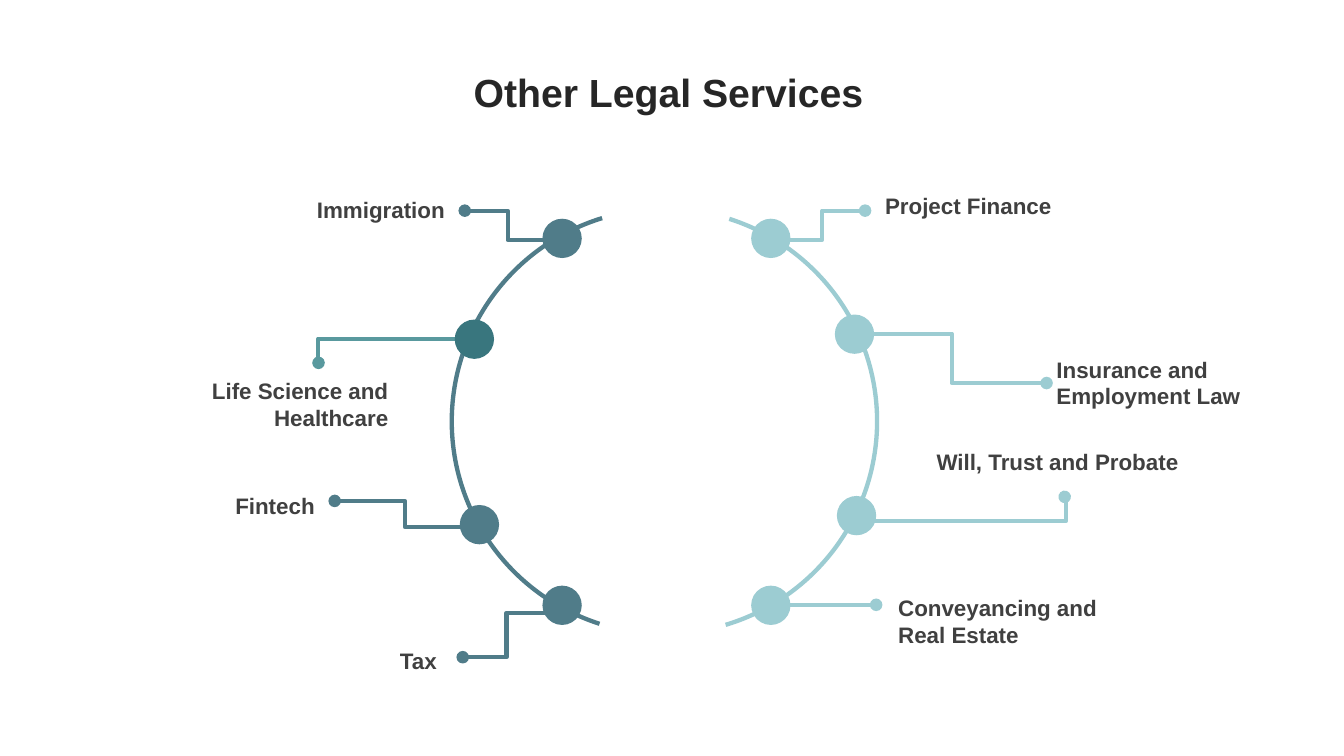
"""Build the slide of other legal services around two arcs."""
from collections import namedtuple

from lxml import etree
from pptx import Presentation
from pptx.dml.color import RGBColor
from pptx.enum.shapes import MSO_CONNECTOR as CONNECTOR, MSO_SHAPE as SHAPE
from pptx.enum.text import MSO_ANCHOR as ANCHOR, MSO_AUTO_SIZE as AUTO_SIZE, PP_ALIGN as ALIGN
from pptx.oxml.ns import qn
from pptx.util import Emu, Pt

EMU_PER_PX = 9144
NODE_SIZE = 39
COLORS = {
    "title": "262626", "label": "404040", "slate": "507C89",
    "sky": "9CCCD2", "teal": "39767E", "teal_line": "59999E",
}
TITLE_FONT = {"name": "Arial", "size": Pt(28), "bold": True}
LABEL_FONT = {"name": "Arial", "size": Pt(16), "bold": True}

Service = namedtuple("Service", "text box align node start end bend node_color link_color")
SERVICES = [
    Service("Immigration", (167, 190, 284, 37), ALIGN.RIGHT,
            (538, 217), (546, 238), (461, 209), 0.5, "slate", "slate"),
    Service("Life Science and Healthcare", (128, 369, 267, 64), ALIGN.RIGHT,
            (451, 317), (479, 336), (316, 360), 1.001, "teal", "teal_line"),
    Service("Fintech", (51, 483, 271, 37), ALIGN.RIGHT,
            (456, 501), (471, 523), (332, 497), 0.5, "slate", "slate"),
    Service("Tax", (159, 637, 284, 37), ALIGN.RIGHT,
            (538, 581), (546, 608), (459, 652), 0.5, "slate", "slate"),
    Service("Project Finance", (868, 186, 275, 37), ALIGN.LEFT,
            (745, 217), (773, 238), (858, 209), 0.5, "sky", "sky"),
    Service("Insurance and Employment Law", (1038, 348, 275, 64), ALIGN.LEFT,
            (828, 312), (850, 331), (1038, 380), 0.5, "sky", "sky"),
    Service("Will, Trust and Probate", (919, 440, 275, 37), ALIGN.LEFT,
            (830, 492), (850, 517), (1056, 493), 1.006, "sky", "sky"),
    Service("Conveyancing and Real Estate", (881, 585, 261, 64), ALIGN.LEFT,
            (745, 581), (773, 600), (869, 600), 0.5, "sky", "sky"),
]


def px(*lengths):
    """Turn px lengths into a list of EMU lengths."""
    return [Emu(length * EMU_PER_PX) for length in lengths]


def rgb(name):
    """Look up a named colour."""
    return RGBColor.from_string(COLORS[name])


def write(frame, text, align, font, color):
    """Fill a text frame with one formatted paragraph."""
    frame.word_wrap = True
    paragraph = frame.paragraphs[0]
    paragraph.text = text
    paragraph.alignment = align
    for key, value in font.items():
        setattr(paragraph.font, key, value)
    paragraph.font.color.rgb = rgb(color)
    return paragraph


def set_title(slide, text):
    """Place and format the title placeholder."""
    title = slide.shapes.title
    title.left, title.top, title.width, title.height = px(30, 55, 1266, 79)
    title.text_frame.vertical_anchor = ANCHOR.MIDDLE
    paragraph = write(title.text_frame, text, ALIGN.CENTER, TITLE_FONT, "title")
    paragraph.line_spacing = 0.9


def add_solid(slide, kind, box, color):
    """Add a filled preset shape without outline or shadow."""
    shape = slide.shapes.add_shape(kind, *px(*box))
    shape.shadow.inherit = False
    shape.fill.solid()
    shape.fill.fore_color.rgb = rgb(color)
    shape.line.fill.background()
    return shape


def add_arc(slide, rotation, end_angle, color):
    """Add a thin arc that opens towards the middle of the slide."""
    arc = add_solid(slide, SHAPE.BLOCK_ARC, (446, 205, 426, 426), color)
    arc.rotation = rotation
    for index, value in enumerate((197.75 * 0.6, end_angle * 0.6, 0.01)):
        arc.adjustments[index] = value


def add_link(slide, service):
    """Add the dotted-end connector from a node to its label."""
    is_level = service.start[1] == service.end[1]
    kind = CONNECTOR.STRAIGHT if is_level else CONNECTOR.ELBOW
    link = slide.shapes.add_connector(kind, *px(*service.start, *service.end))
    link.line.width = Pt(3)
    link.line.color.rgb = rgb(service.link_color)
    properties = link._element.spPr
    if not is_level:
        guides = properties.find(qn("a:prstGeom")).find(qn("a:avLst"))
        etree.SubElement(guides, qn("a:gd"), name="adj1",
                         fmla=f"val {round(service.bend * 100000)}")
    etree.SubElement(properties.find(qn("a:ln")), qn("a:tailEnd"), type="oval")
    etree.SubElement(properties, qn("a:effectLst"))


def add_label(slide, service):
    """Add the text box that names a service."""
    label = slide.shapes.add_textbox(*px(*service.box))
    write(label.text_frame, service.text, service.align, LABEL_FONT, "label")
    label.text_frame.auto_size = AUTO_SIZE.SHAPE_TO_FIT_TEXT


def main():
    """Build and save the presentation."""
    presentation = Presentation()
    presentation.slide_width, presentation.slide_height = px(1333, 750)
    slide = presentation.slides.add_slide(presentation.slide_layouts[5])
    set_title(slide, "Other Legal Services")
    add_arc(slide, 90, 343.29, "sky")
    add_arc(slide, 270, 342.98, "slate")
    for service in SERVICES:
        add_link(slide, service)
        add_solid(slide, SHAPE.OVAL, (*service.node, NODE_SIZE, NODE_SIZE), service.node_color)
        add_label(slide, service)
    presentation.save("out.pptx")


if __name__ == "__main__":
    main()
